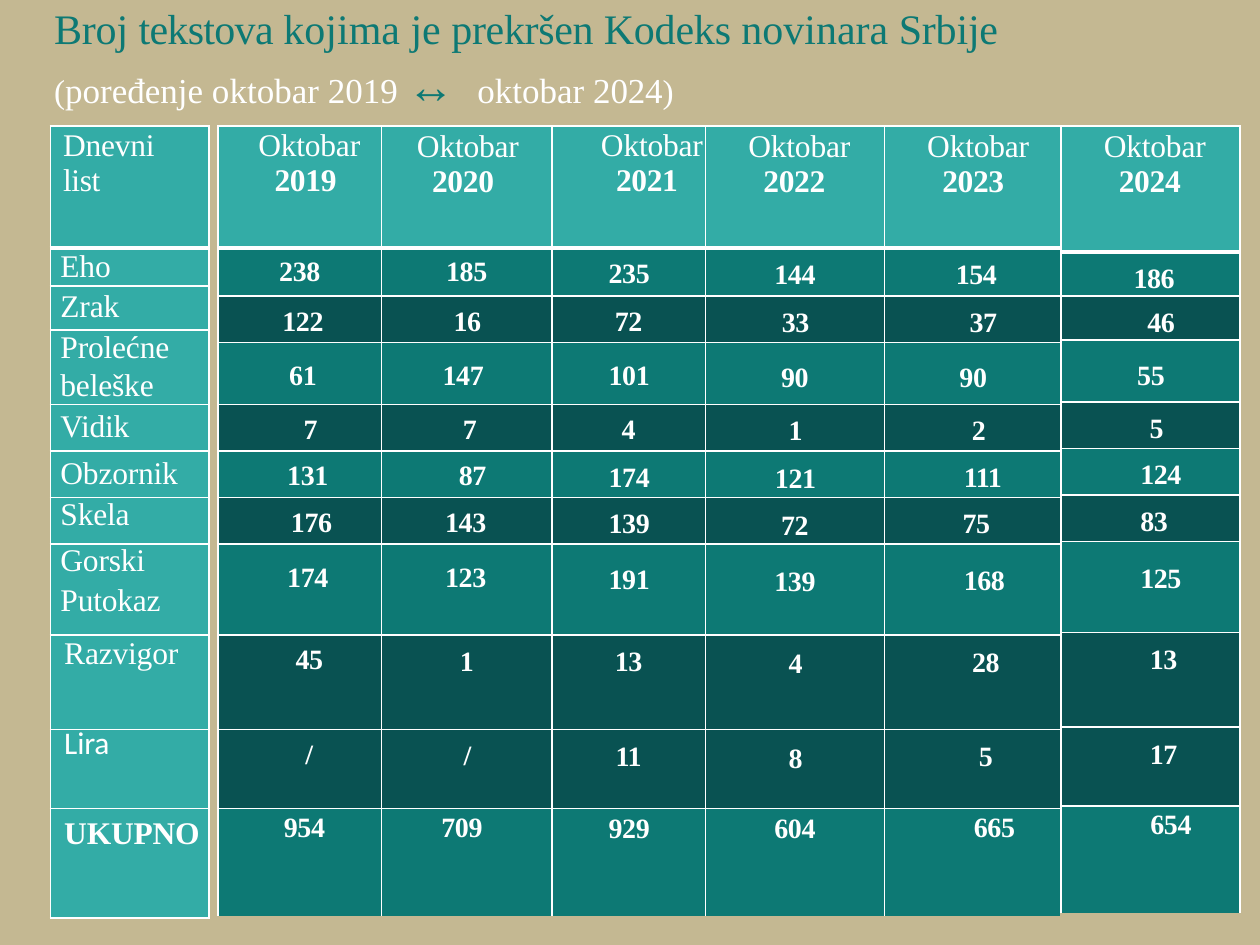
import pptx
import pptx.util
import pptx.dml.color
import pptx.enum.text
import lxml.etree

Inches = pptx.util.Inches
Pt = pptx.util.Pt
ALIGN = pptx.enum.text.PP_ALIGN
SERIF = "Times New Roman"
COLORS = {"sand": "C4B892", "teal": "0D7974", "dark": "095252", "light": "33ACA6", "white": "FFFFFF"}

TITLE = [("Broj ", -0.1), ("tekstova ", -0.4), ("kojima je ", 0), ("prekršen ", -0.2),
         ("Kodeks ", -0.1), ("novinara ", 0), ("Srbije", -0.1)]
SUBTITLE = [("(", 19, "white", False, 0), ("poređenje oktobar 2019 ", 20, "white", False, 0),
            ("↔ ", 27, "teal", True, 3.2), ("oktobar ", 20, "white", False, 0),
            ("2024", 20, "white", False, -0.1), (")", 19, "white", False, -0.1)]

COLUMNS = [1.26, 0.07, 1.3, 1.35, 1.22, 1.42, 1.4]
ROWS = [0.97, 0.3, 0.08, 0.27, 0.1, 0.49, 0.37, 0.37, 0.37, 0.72, 0.75, 0.63, 0.87]
LAST_COLUMN = 1.42
LAST_ROWS = [1, 0.35, 0.35] + ROWS[5:]

YEARS = [("2019", 0.32, 0.45, 0.02), ("2020", 0.28, 0.4, 0.03), ("2021", 0.39, 0.51, 0.02),
         ("2022", 0.34, 0.46, 0.03), ("2023", 0.34, 0.46, 0.03), ("2024", 0.34, 0.46, 0.03)]

NAMES = [
    (["Eho"], 1, 1, 0, 0.08, [20.5]),
    (["Zrak"], 2, 3, 0.03, 0.08, [None]),
    (["Prolećne", "beleške"], 4, 5, 0, 0.08, [20.2, 21.4]),
    (["Vidik"], 6, 6, 0.04, 0.08, [None]),
    (["Obzornik"], 7, 7, 0.04, 0.08, [None]),
    (["Skela"], 8, 8, 0, 0.08, [None]),
    (["Gorski", "Putokaz"], 9, 9, 0, 0.08, [19.6, None]),
    (["Razvigor"], 10, 10, 0, 0.11, [20.6]),
    (["Lira"], 11, 11, 0, 0.11, [19.1]),
    (["UKUPNO"], 12, 12, 0.06, 0.11, [None]),
]
COUNTS = [
    (1, 2, "teal", ["238", "185", "235", "144", "154", "186"],
     [0.07, 0.07, 0.08, 0.09, 0.09], [("c", 0), ("c", 0), ("c", 0.01), ("c", 0), ("c", 0.06)]),
    (3, 4, "dark", ["122", "16", "72", "33", "37", "46"],
     [0.08, 0.08, 0.08, 0.09, 0.09], [("c", 0.05), ("c", 0.01), ("c", 0), ("c", 0.01), ("c", 0.17)]),
    (5, 5, "teal", ["61", "147", "101", "90", "90", "55"],
     [0.14, 0.14, 0.14, 0.16, 0.16], [("c", 0.05), ("r", 0.54), ("c", 0.01), ("c", 0), ("c", 0.01)]),
    (6, 6, "dark", ["7", "7", "4", "1", "2", "5"],
     [0.08, 0.08, 0.08, 0.09, 0.09], [("r", 0.51), ("c", 0.05), ("c", 0), ("c", 0.01), ("c", 0.1)]),
    (7, 7, "teal", ["131", "87", "174", "121", "111", "124"],
     [0.08, 0.08, 0.09, 0.1, 0.09], [("l", 0.55), ("r", 0.52), ("c", 0.01), ("c", 0.01), ("l", 0.63)]),
    (8, 8, "dark", ["176", "143", "139", "72", "75", "83"],
     [0.08, 0.08, 0.09, 0.1, 0.09], [("l", 0.58), ("r", 0.52), ("c", 0.01), ("c", 0), ("c", 0.06)]),
    (9, 9, "teal", ["174", "123", "191", "139", "168", "125"],
     [0.15, 0.15, 0.16, 0.18, 0.17], [("l", 0.55), ("r", 0.52), ("c", 0.01), ("c", 0), ("l", 0.63)]),
    (10, 10, "dark", ["45", "1", "13", "4", "28", "13"],
     [0.08, 0.09, 0.09, 0.11, 0.1], [("c", 0.15), ("c", 0), ("c", 0), ("c", 0.01), ("c", 0.21)]),
    (11, 11, "dark", ["/", "/", "11", "8", "5", "17"],
     [0.08, 0.09, 0.1, 0.11, 0.1], [("c", 0.15), ("c", 0.01), ("c", 0), ("c", 0.01), ("c", 0.21)]),
    (12, 12, "teal", ["954", "709", "929", "604", "665", "654"],
     [0.03, 0.03, 0.04, 0.04, 0.03], [("r", 0.45), ("r", 0.55), ("c", 0.01), ("c", 0), ("l", 0.71)]),
]
ALIGNMENTS = {"l": ALIGN.LEFT, "c": ALIGN.CENTER, "r": ALIGN.RIGHT}
THIN = ("white", 1)
THICK = ("white", 3)
GRID = {"L": THIN, "R": THIN, "T": THIN, "B": THIN}


def add_run(paragraph, text, size, color="white", bold=False, spacing=0, font=SERIF):
    run = paragraph.add_run()
    run.text = text
    run.font.name = font
    run.font.size = Pt(size)
    run.font.bold = bold
    run.font.color.rgb = pptx.dml.color.RGBColor.from_string(COLORS[color])
    run.font._element.set("spc", str(round(spacing * 100)))


def prepare_frame(frame, top):
    frame.margin_left = Inches(0.01)
    frame.margin_right = frame.margin_bottom = 0
    frame.margin_top = Inches(top)
    frame.word_wrap = True
    frame.auto_size = pptx.enum.text.MSO_AUTO_SIZE.NONE
    frame.vertical_anchor = pptx.enum.text.MSO_ANCHOR.TOP
    paragraph = frame.paragraphs[0]
    paragraph.alignment = ALIGN.LEFT
    return paragraph


def style_cell(cell, fill, borders, top=0, right=0):
    cell.margin_left = cell.margin_bottom = 0
    cell.margin_top, cell.margin_right = Inches(top), Inches(right)
    properties = cell._tc.get_or_add_tcPr()
    for side in "LRTB":
        line = lxml.etree.SubElement(properties, pptx.oxml.ns.qn("a:ln" + side))
        if side in borders:
            color, width = borders[side]
            line.set("w", str(Pt(width)))
            solid = lxml.etree.SubElement(line, pptx.oxml.ns.qn("a:solidFill"))
            lxml.etree.SubElement(solid, pptx.oxml.ns.qn("a:srgbClr"), val=COLORS[color])
        else:
            line.set("w", "0")
            lxml.etree.SubElement(line, pptx.oxml.ns.qn("a:noFill"))
    if fill:
        cell.fill.solid()
        cell.fill.fore_color.rgb = pptx.dml.color.RGBColor.from_string(COLORS[fill])
    else:
        cell.fill.background()


def style_span(table, column, first, last, *style):
    for row in range(first, last + 1):
        style_cell(table.cell(row, column), *style)
    cell = table.cell(first, column)
    if last > first:
        cell.merge(table.cell(last, column))
    return cell


def add_line(cell, index, indent, alignment="l", spacing=None):
    frame = cell.text_frame
    paragraph = frame.add_paragraph() if index else frame.paragraphs[0]
    paragraph.alignment = ALIGNMENTS[alignment]
    paragraph._p.get_or_add_pPr().set("marL", str(Inches(indent)))
    if spacing:
        paragraph.line_spacing = Pt(spacing)
    return paragraph


def add_table(slide, left, columns, rows):
    frame = slide.shapes.add_table(len(rows), len(columns), Inches(left), Inches(1),
                                   Inches(sum(columns)), Inches(sum(rows)))
    table = frame.table
    table.first_row = table.horz_banding = False
    for column, width in zip(table.columns, columns):
        column.width = Inches(width)
    for row, height in zip(table.rows, rows):
        row.height = Inches(height)
    return table


def add_year(table, column, year, month_indent, year_indent, top):
    cell = style_span(table, column, 0, 0, "light", GRID | {"B": THICK}, top)
    add_run(add_line(cell, 0, month_indent), "Oktobar", 18, spacing=-0.1)
    add_run(add_line(cell, 1, year_indent), year, 18, bold=True, spacing=-0.2)


def add_count(table, column, first, last, fill, text, top, placement, index):
    alignment, offset = placement
    borders = dict(GRID)
    if index == 0:
        borders["T"] = THICK
    if index == len(COUNTS) - 1:
        borders["B"] = ("sand", 3)
    right = offset if alignment == "r" else 0
    cell = style_span(table, column, first, last, fill, borders, top, right)
    paragraph = add_line(cell, 0, 0 if right else offset, alignment)
    add_run(paragraph, text, 16, bold=True, spacing=-0.2)


presentation = pptx.Presentation()
presentation.slide_width, presentation.slide_height = Inches(10), Inches(7.5)
slide = presentation.slides.add_slide(presentation.slide_layouts[5])
slide.background.fill.solid()
slide.background.fill.fore_color.rgb = pptx.dml.color.RGBColor.from_string(COLORS["sand"])

title = slide.shapes.title
title.left, title.top, title.width, title.height = map(Inches, (0.42, 0.01, 7.9, 0.43))
paragraph = prepare_frame(title.text_frame, 0.01)
paragraph.space_before = Pt(1)
for text, spacing in TITLE:
    add_run(paragraph, text, 24, "teal", spacing=spacing)

subtitle = slide.shapes.add_textbox(*map(Inches, (0.42, 0.43, 5.26, 0.48)))
paragraph = prepare_frame(subtitle.text_frame, 0.02)
paragraph.space_before = Pt(1.1)
for part in SUBTITLE:
    add_run(paragraph, *part)

main_table = add_table(slide, 0.4, COLUMNS, ROWS)
last_table = add_table(slide, 8.42, [LAST_COLUMN], LAST_ROWS)

header = style_span(main_table, 0, 0, 0, "light", GRID | {"B": THICK}, 0.02)
for index, (text, spacing) in enumerate([("Dnevni", -0.1), ("list", -0.2)]):
    add_run(add_line(header, index, 0.1), text, 18, spacing=spacing)
for first, last in [(0, 0), (1, len(ROWS) - 1)]:
    style_span(main_table, 1, first, last, None, {"L": THIN, "R": THIN})

for lines, first, last, top, indent, spacings in NAMES:
    borders = GRID | {"T": THICK if first == 1 else THIN}
    cell = style_span(main_table, 0, first, last, "light", borders, top)
    for index, (text, spacing) in enumerate(zip(lines, spacings)):
        paragraph = add_line(cell, index, indent, spacing=spacing)
        if index and not spacing:
            paragraph.space_before = Pt(3.1)
        add_run(paragraph, text, 18, bold=text == "UKUPNO",
                spacing=-0.1, font="Calibri" if text == "Lira" else SERIF)

for column, year in enumerate(YEARS[:-1], 2):
    add_year(main_table, column, *year)
add_year(last_table, 0, *YEARS[-1])

for index, (first, last, fill, values, tops, placements) in enumerate(COUNTS):
    for column, (text, top, placement) in enumerate(zip(values, tops, placements), 2):
        add_count(main_table, column, first, last, fill, text, top, placement, index)
    add_count(last_table, 0, index + 1, index + 1, fill, values[-1], tops[-1], placements[-1], index)

presentation.save("out.pptx")
